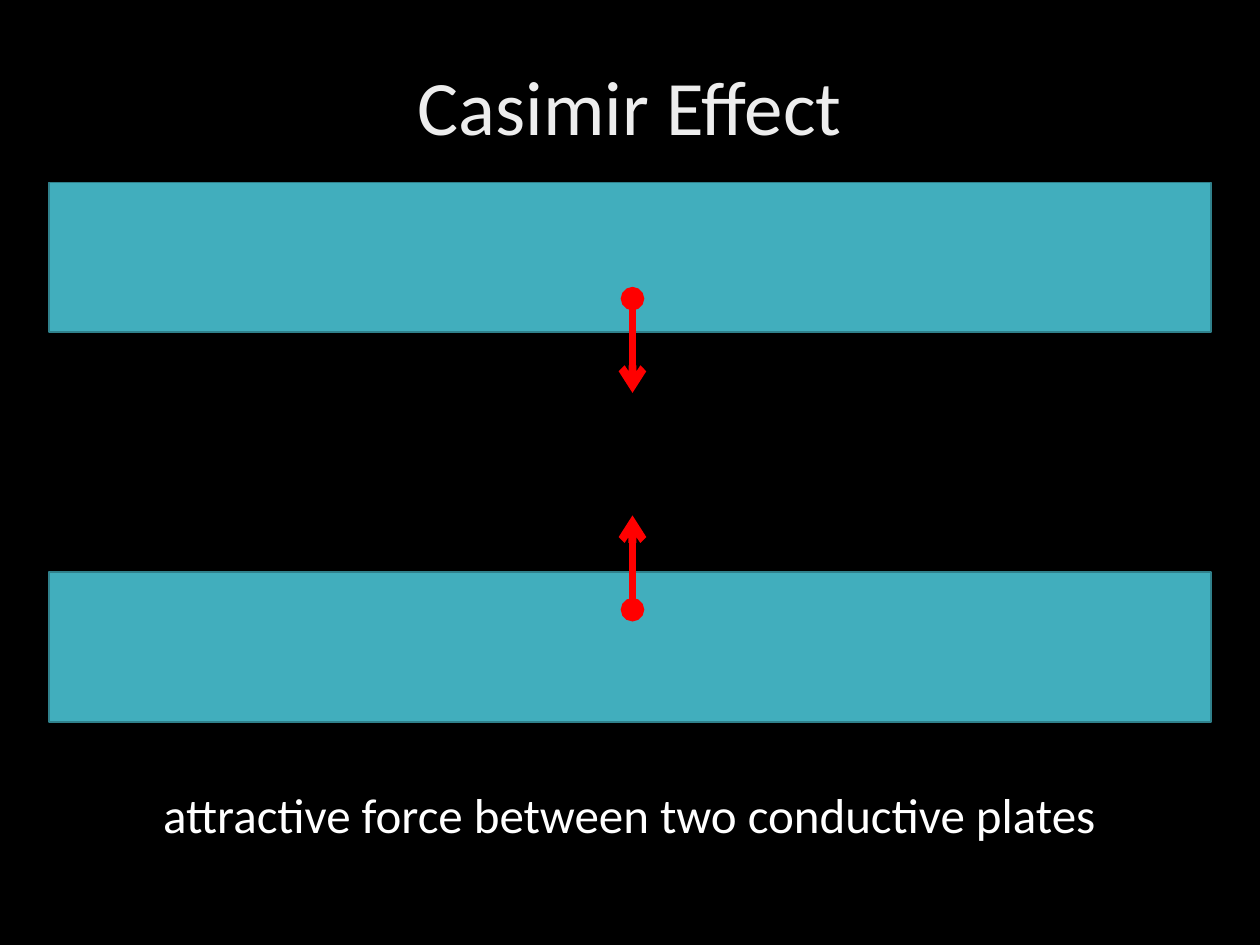
from lxml import etree
from pptx import Presentation
from pptx.dml.color import RGBColor
from pptx.enum import shapes, text
from pptx.oxml.ns import qn
from pptx.util import Cm, Pt

BLACK = RGBColor(0x00, 0x00, 0x00)
WHITE = RGBColor(0xFF, 0xFF, 0xFF)
TITLE_GREY = RGBColor(0xED, 0xED, 0xED)
PLATE_FILL = RGBColor(0x41, 0xAE, 0xBD)
PLATE_EDGE = RGBColor(0x30, 0x81, 0x8C)
FORCE_RED = RGBColor(0xFF, 0x00, 0x00)

PLATE_TOPS = (3.68, 11.53)
FORCE_X = 12.75
FORCE_SPANS = ((6.02, 7.92), (12.29, 10.39))  # start and tip, in cm


def add_text(slide, content, left, top, width, height, *, size, color,
             anchor=text.MSO_ANCHOR.TOP, wrap=True, spacing=1.0,
             auto_size=text.MSO_AUTO_SIZE.NONE):
    sp = slide.shapes.add_textbox(Cm(left), Cm(top), Cm(width), Cm(height))
    tf = sp.text_frame
    tf.word_wrap = wrap
    tf.auto_size = auto_size
    tf.vertical_anchor = anchor
    p = tf.paragraphs[0]
    p.alignment = text.PP_ALIGN.CENTER
    p.line_spacing = spacing
    r = p.add_run()
    r.text = content
    r.font.name = "Calibri"
    r.font.size = Pt(size)
    r.font.color.rgb = color


def add_plate(group, top):
    sp = group.shapes.add_shape(shapes.MSO_SHAPE.RECTANGLE,
                                Cm(0.99), Cm(top), Cm(23.42), Cm(3.02))
    sp.shadow.inherit = False
    sp.fill.solid()
    sp.fill.fore_color.rgb = PLATE_FILL
    sp.line.color.rgb = PLATE_EDGE
    sp.line.width = Pt(1)


def add_force(group, start, tip):
    """Draw a vertical arrow with a round start and an open tip."""
    line = group.shapes.add_connector(shapes.MSO_CONNECTOR.STRAIGHT,
                                      Cm(FORCE_X), Cm(start),
                                      Cm(FORCE_X), Cm(tip))
    line.line.color.rgb = FORCE_RED
    line.line.width = Pt(4.5)
    ln = line.line._get_or_add_ln()
    etree.SubElement(ln, qn("a:headEnd"), type="oval")
    etree.SubElement(ln, qn("a:tailEnd"), type="arrow")
    etree.SubElement(line._element.spPr, qn("a:effectLst"))


def main():
    prs = Presentation()
    prs.slide_width, prs.slide_height = Cm(25.4), Cm(19.05)
    slide = prs.slides.add_slide(prs.slide_layouts[6])
    slide.background.fill.solid()
    slide.background.fill.fore_color.rgb = BLACK

    add_text(slide, "Casimir Effect", 1.75, 0.38, 21.9, 3.68, size=44,
             color=TITLE_GREY, anchor=text.MSO_ANCHOR.MIDDLE, spacing=0.9)
    plates = slide.shapes.add_group_shape()
    for top in PLATE_TOPS:
        add_plate(plates, top)
    add_text(slide, "attractive force between two conductive plates",
             2.79, 15.7, 19.79, 1.45, size=28, color=WHITE, wrap=False,
             auto_size=text.MSO_AUTO_SIZE.SHAPE_TO_FIT_TEXT)
    forces = slide.shapes.add_group_shape()
    for start, tip in FORCE_SPANS:
        add_force(forces, start, tip)

    prs.save("out.pptx")


if __name__ == "__main__":
    main()
